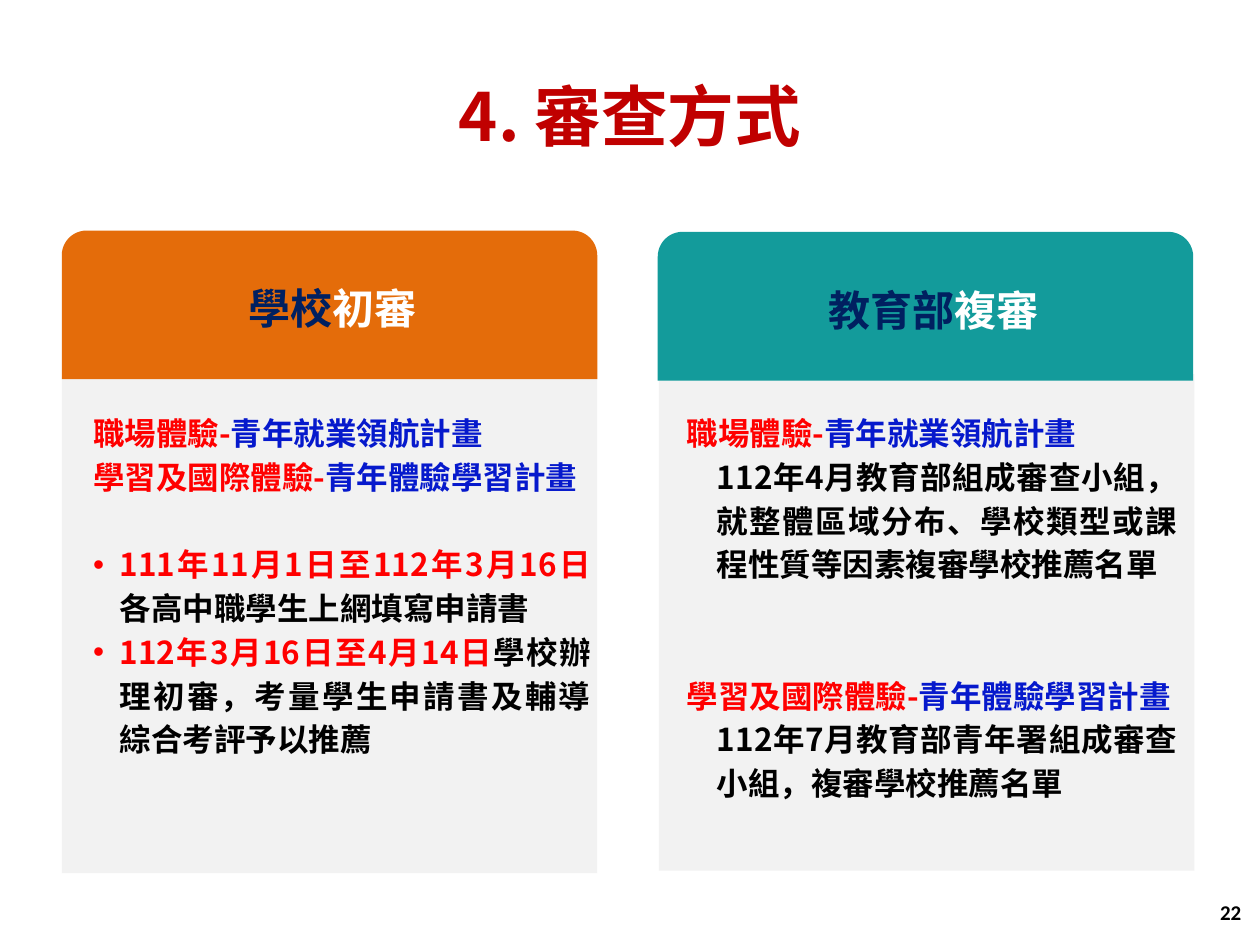
from pptx import Presentation
from pptx.dml.color import RGBColor
from pptx.enum.shapes import MSO_SHAPE as Shape
from pptx.enum.text import MSO_ANCHOR as Anchor, PP_ALIGN as Align
from pptx.oxml.ns import qn
from pptx.util import Inches, Pt
from lxml.etree import SubElement

BLACK = RGBColor(0x00, 0x00, 0x00)
WHITE = RGBColor(0xFF, 0xFF, 0xFF)
GRAY = RGBColor(0xF2, 0xF2, 0xF2)
CRIMSON = RGBColor(0xC0, 0x00, 0x00)
RED = RGBColor(0xFF, 0x00, 0x00)
BLUE = RGBColor(0x06, 0x19, 0xCC)
NAVY = RGBColor(0x00, 0x20, 0x60)
ORANGE = RGBColor(0xE4, 0x6C, 0x0A)
TEAL = RGBColor(0x13, 0x9B, 0x9B)
SANS = "Noto Sans CJK SC"


class Deck:
    def __init__(self, slide):
        self.slide = slide

    def block(self, kind, box, fill):
        shape = self.slide.shapes.add_shape(kind, *map(Inches, box))
        shape.shadow.inherit = False
        shape.fill.solid()
        shape.fill.fore_color.rgb = fill
        shape.line.fill.background()

    def frame(self, box, anchor=Anchor.MIDDLE):
        frame = self.slide.shapes.add_textbox(*map(Inches, box)).text_frame
        frame.word_wrap = True
        frame.vertical_anchor = anchor
        return frame

    def runs(self, para, parts, size, align, font=SANS):
        para.alignment = align
        for text, color in parts:
            run = para.add_run()
            run.text = text
            run.font.size = Pt(size)
            run.font.bold = True
            run.font.name = font
            run.font.color.rgb = color
            SubElement(run._r.get_or_add_rPr(), qn("a:ea"), typeface=font)

    def label(self, box, parts, size, align=Align.CENTER, font=SANS, pitch=None):
        para = self.frame(box).paragraphs[0]
        para.line_spacing = pitch
        self.runs(para, parts, size, align, font)

    def body(self, box, inset, items):
        frame = self.frame(box, Anchor.TOP)
        frame.margin_left, frame.margin_right = map(Inches, inset)
        for i, (parts, indent, bullet, gap) in enumerate(items):
            para = frame.add_paragraph() if i else frame.paragraphs[0]
            para.line_spacing = Pt(25)
            if gap:
                para.space_before = Pt(gap)
            props = para._p.get_or_add_pPr()
            props.set("marL", str(Inches(indent)))
            props.set("indent", str(Inches(-indent if bullet else 0)))
            if bullet:
                SubElement(props, qn("a:buFont"), typeface="Arial")
                SubElement(props, qn("a:buChar"), char="•")
            self.runs(para, parts, 18, Align.JUSTIFY)

    def card(self, panel, head, fill, title, name, text, inset, items):
        self.block(Shape.RECTANGLE, (*panel, 4.25, 3.94), GRAY)
        self.block(Shape.ROUND_2_SAME_RECTANGLE, (*head, 4.25, 1.18), fill)
        self.body((text, 3.19, 4.13, 3.73), inset, items)
        self.label((*title, 3.54, 0.51), name, 24, pitch=1.1)


def main():
    prs = Presentation()
    prs.slide_width, prs.slide_height = Inches(10), Inches(7.5)
    deck = Deck(prs.slides.add_slide(prs.slide_layouts[6]))

    job = [("職場體驗-", RED), ("青年就業領航計畫", BLUE)]
    study = [("學習及國際體驗-", RED), ("青年體驗學習計畫", BLUE)]
    apply = [("111年11月1日至112年3月16日", RED),
             ("各高中職學生上網填寫申請書", BLACK)]
    screen = [("112年3月16日至4月14日", RED),
              ("學校辦理初審，考量學生申請書及輔導綜合考評予以推薦", BLACK)]
    panel = [("112年4月教育部組成審查小組，就整體區域分布、"
              "學校類型或課程性質等因素複審學校推薦名單", BLACK)]
    youth = [("112年7月教育部青年署組成審查小組，複審學校推薦名單", BLACK)]

    deck.label((7.62, 7.04, 2.33, 0.4), [("22", BLACK)], 12, Align.RIGHT, "Calibri")
    deck.label((0, 0.62, 10, 0.59), [("4. 審查方式", CRIMSON)], 38)
    deck.card((0.49, 2.99), (0.49, 1.83), ORANGE,
              (0.87, 2.17), [("學校", NAVY), ("初審", WHITE)], 0.56, (0.18, 0),
              [(job, 0, False, 0), (study, 0, False, 0),
               (apply, 0.21, True, 25), (screen, 0.21, True, 0)])
    deck.card((5.23, 2.97), (5.22, 1.84), TEAL,
              (5.64, 2.18), [("教育部", NAVY), ("複審", WHITE)], 5.31, (0.14, 0.1),
              [(job, 0, False, 0), (panel, 0.24, False, 0),
               (study, 0, False, 50), (youth, 0.24, False, 0)])
    prs.save("out.pptx")


if __name__ == "__main__":
    main()
